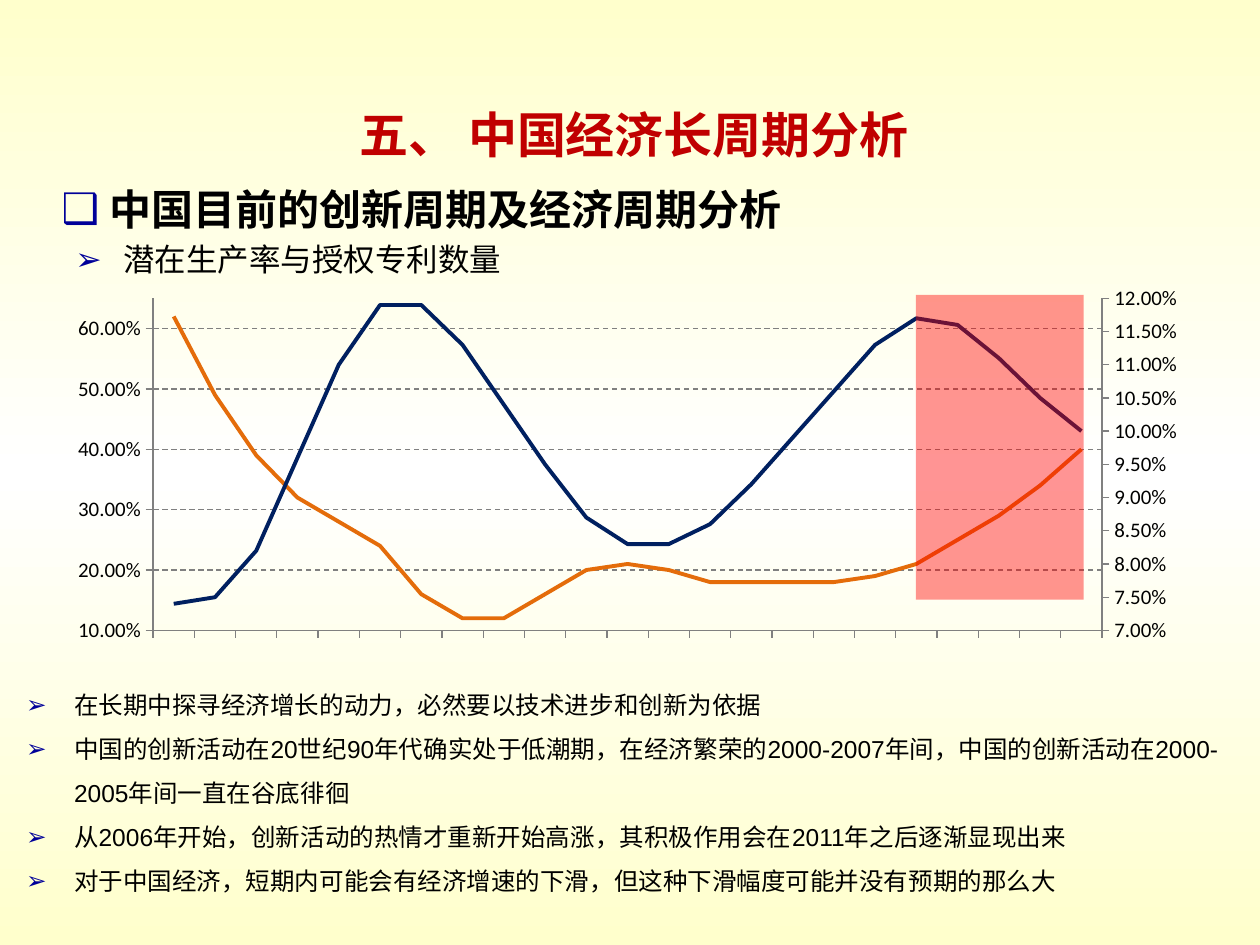
from copy import deepcopy

from lxml import etree
from pptx import Presentation
from pptx.chart.data import CategoryChartData
from pptx.dml.color import RGBColor
from pptx.enum.chart import XL_CHART_TYPE, XL_LEGEND_POSITION, XL_TICK_LABEL_POSITION, XL_TICK_MARK
from pptx.enum.dml import MSO_LINE
from pptx.enum.shapes import MSO_SHAPE
from pptx.enum.text import PP_ALIGN
from pptx.oxml import parse_xml
from pptx.oxml.ns import nsdecls, qn
from pptx.util import Inches, Pt

LINE = XL_CHART_TYPE.LINE
TICK_OUT, TICK_NONE = XL_TICK_MARK.OUTSIDE, XL_TICK_MARK.NONE
NO_LABELS = XL_TICK_LABEL_POSITION.NONE
LEGEND_RIGHT = XL_LEGEND_POSITION.RIGHT
DASH = MSO_LINE.DASH
RECTANGLE = MSO_SHAPE.RECTANGLE
CENTER = PP_ALIGN.CENTER

CREAM = RGBColor(0xFF, 0xFF, 0xCC)
WHITE = RGBColor(0xFF, 0xFF, 0xFF)
BLACK = RGBColor(0, 0, 0)
GRAY = RGBColor(0x80, 0x80, 0x80)
DARK_RED = RGBColor(0xC0, 0, 0)
RED = RGBColor(0xFF, 0, 0)
BULLET_BLUE = RGBColor(0, 0, 0x99)
ORANGE = RGBColor(0xE4, 0x6C, 0x0A)
NAVY = RGBColor(0, 0x20, 0x60)


def add_bullets(slide, box, lines, size, bullet, margin, level, spacing, bold=False):
    tf = slide.shapes.add_textbox(*(Inches(v) for v in box)).text_frame
    tf.word_wrap = True
    for i, line in enumerate(lines):
        p = tf.paragraphs[0] if i == 0 else tf.add_paragraph()
        p.level = level
        pPr = p._p.get_or_add_pPr()
        pPr.set("marL", str(Inches(margin)))
        pPr.set("indent", str(Inches(-0.38)))
        color = etree.SubElement(pPr, qn("a:buClr"))
        etree.SubElement(color, qn("a:srgbClr"), val=str(BULLET_BLUE))
        etree.SubElement(pPr, qn("a:buFont"), typeface="Arial")
        etree.SubElement(pPr, qn("a:buChar"), char=bullet)
        p.line_spacing = spacing
        r = p.add_run()
        r.text = line
        r.font.size, r.font.name, r.font.bold = Pt(size), "Arial", bold
        r.font.color.rgb = BLACK


def set_layout(parent, x, y, w, h, inner=False):
    """Place a plot area or legend by fractions of the chart."""
    target = '<c:layoutTarget val="inner"/>' if inner else ""
    layout = parse_xml(
        f'<c:layout {nsdecls("c")}><c:manualLayout>{target}'
        '<c:xMode val="edge"/><c:yMode val="edge"/>'
        f'<c:x val="{x}"/><c:y val="{y}"/><c:w val="{w}"/><c:h val="{h}"/>'
        '</c:manualLayout></c:layout>')
    for old in parent.findall(qn("c:layout")):
        parent.remove(old)
    parent.insert(1 if parent.find(qn("c:legendPos")) is not None else 0, layout)


prs = Presentation()
prs.slide_width, prs.slide_height = Inches(10), Inches(7.5)
s = prs.slides.add_slide(prs.slide_layouts[5])

# Background: cream, white, cream from top to bottom
fill = s.background.fill
fill.gradient()
fill.gradient_angle = 90
stops = fill._fill._gradFill.find(qn("a:gsLst"))
stops.append(deepcopy(stops[-1]))
for stop, position, color in zip(fill.gradient_stops, (0, 0.5, 1), (CREAM, WHITE, CREAM)):
    stop.position = position
    stop.color.rgb = color

# Title and headings
title = s.shapes.title
title.left, title.top, title.width, title.height = (Inches(v) for v in (0.62, 0.78, 8.82, 0.57))
p = title.text_frame.paragraphs[0]
p.alignment = CENTER
r = p.add_run()
r.text = "五、 中国经济长周期分析"
r.font.size, r.font.name, r.font.bold = Pt(28), "Arial", True
r.font.color.rgb = DARK_RED

add_bullets(s, (0.39, 1.33, 7.58, 0.55), ["中国目前的创新周期及经济周期分析"],
            24, "❑", 0.38, 0, 1.2, True)
add_bullets(s, (0, 1.8, 9.84, 0.47), ["潜在生产率与授权专利数量"], 18, "➢", 0.88, 1, 1.2)
add_bullets(s, (-0.39, 5.31, 10.16, 2.19), [
    "在长期中探寻经济增长的动力，必然要以技术进步和创新为依据",
    "中国的创新活动在20世纪90年代确实处于低潮期，在经济繁荣的2000-2007年间，"
    "中国的创新活动在2000-2005年间一直在谷底徘徊",
    "从2006年开始，创新活动的热情才重新开始高涨，其积极作用会在2011年之后逐渐显现出来",
    "对于中国经济，短期内可能会有经济增速的下滑，但这种下滑幅度可能并没有预期的那么大",
], 14, "➢", 0.88, 1, 1.5)

# Chart: patents on the left axis, GDP on the right axis
data = CategoryChartData(number_format="0.00%")
data.categories = [str(year) for year in range(1988, 2011)]
data.add_series("CHNPAT", (
    0.62, 0.49, 0.39, 0.32, 0.28, 0.24, 0.16, 0.12, 0.12, 0.16, 0.2, 0.21,
    0.2, 0.18, 0.18, 0.18, 0.18, 0.19, 0.21, 0.25, 0.29, 0.34, 0.4))
data.add_series("CHNGDP", (
    0.074, 0.075, 0.082, 0.096, 0.11, 0.119, 0.119, 0.113, 0.104, 0.095, 0.087, 0.083,
    0.083, 0.086, 0.092, 0.099, 0.106, 0.113, 0.117, 0.116, 0.111, 0.105, 0.1))
chart = s.shapes.add_chart(
    LINE, Inches(0.62), Inches(2.27), Inches(8.83), Inches(3.13), data).chart
chart.has_title = False
chart.font.size, chart.font.name = Pt(12), "Calibri"
chart.font.color.rgb = BLACK
chart.has_legend = True
chart.legend.position = LEGEND_RIGHT
chart.legend.include_in_layout = False
set_layout(chart.legend._element, 0.35, 0.02, 0.35, 0.05)

plot = chart.plots[0]
plot.vary_by_categories = False
for series, color in zip(plot.series, (ORANGE, NAVY)):
    series.smooth = False
    series.format.line.width = Pt(2.25)
    series.format.line.color.rgb = color

for axis in (chart.category_axis, chart.value_axis):
    axis.major_tick_mark, axis.minor_tick_mark = TICK_OUT, TICK_NONE
    axis.format.line.color.rgb = GRAY
    axis.format.line.width = Pt(0.75)
chart.category_axis.tick_label_position = NO_LABELS
value_axis = chart.value_axis
value_axis.minimum_scale, value_axis.maximum_scale, value_axis.major_unit = 0.1, 0.65, 0.1
value_axis.tick_labels.number_format = "0.00%"
value_axis.tick_labels.number_format_is_linked = False
value_axis.has_major_gridlines = True
grid = value_axis.major_gridlines.format.line
grid.color.rgb, grid.width, grid.dash_style = GRAY, Pt(0.75), DASH

plot_area = chart._chartSpace.chart.plotArea
set_layout(plot_area, 0.063, 0.019, 0.857, 0.853, inner=True)
left_lines = plot_area.find(qn("c:lineChart"))
right_lines = deepcopy(left_lines)
left_lines.remove(left_lines.findall(qn("c:ser"))[1])
right_lines.remove(right_lines.findall(qn("c:ser"))[0])
left_lines.addnext(right_lines)
for node, ax_id in zip(right_lines.findall(qn("c:axId")), ("5001", "5002")):
    node.set("val", ax_id)

right_cat = deepcopy(plot_area.find(qn("c:catAx")))
right_val = deepcopy(plot_area.find(qn("c:valAx")))
plot_area.find(qn("c:valAx")).addnext(right_val)
right_val.addnext(right_cat)
for axis, ax_id, cross_id in ((right_cat, "5001", "5002"), (right_val, "5002", "5001")):
    axis.find(qn("c:axId")).set("val", ax_id)
    axis.find(qn("c:crossAx")).set("val", cross_id)
right_cat.find(qn("c:delete")).set("val", "1")
right_val.remove(right_val.find(qn("c:majorGridlines")))
right_val.find(qn("c:axPos")).set("val", "r")
right_val.find(qn("c:crosses")).set("val", "max")
right_val.find(qn("c:majorUnit")).set("val", "0.005")
scaling = right_val.find(qn("c:scaling"))
scaling.find(qn("c:min")).set("val", "0.07")
scaling.find(qn("c:max")).set("val", "0.12")

# Highlight over the latest years
highlight = s.shapes.add_shape(RECTANGLE, Inches(7.27), Inches(2.34), Inches(1.33), Inches(2.42))
highlight.shadow.inherit = False
highlight.fill.solid()
highlight.fill.fore_color.rgb = RED
highlight.line.fill.background()
red = highlight._element.spPr.find(qn("a:solidFill")).find(qn("a:srgbClr"))
etree.SubElement(red, qn("a:alpha"), val="42000")

prs.save("out.pptx")
